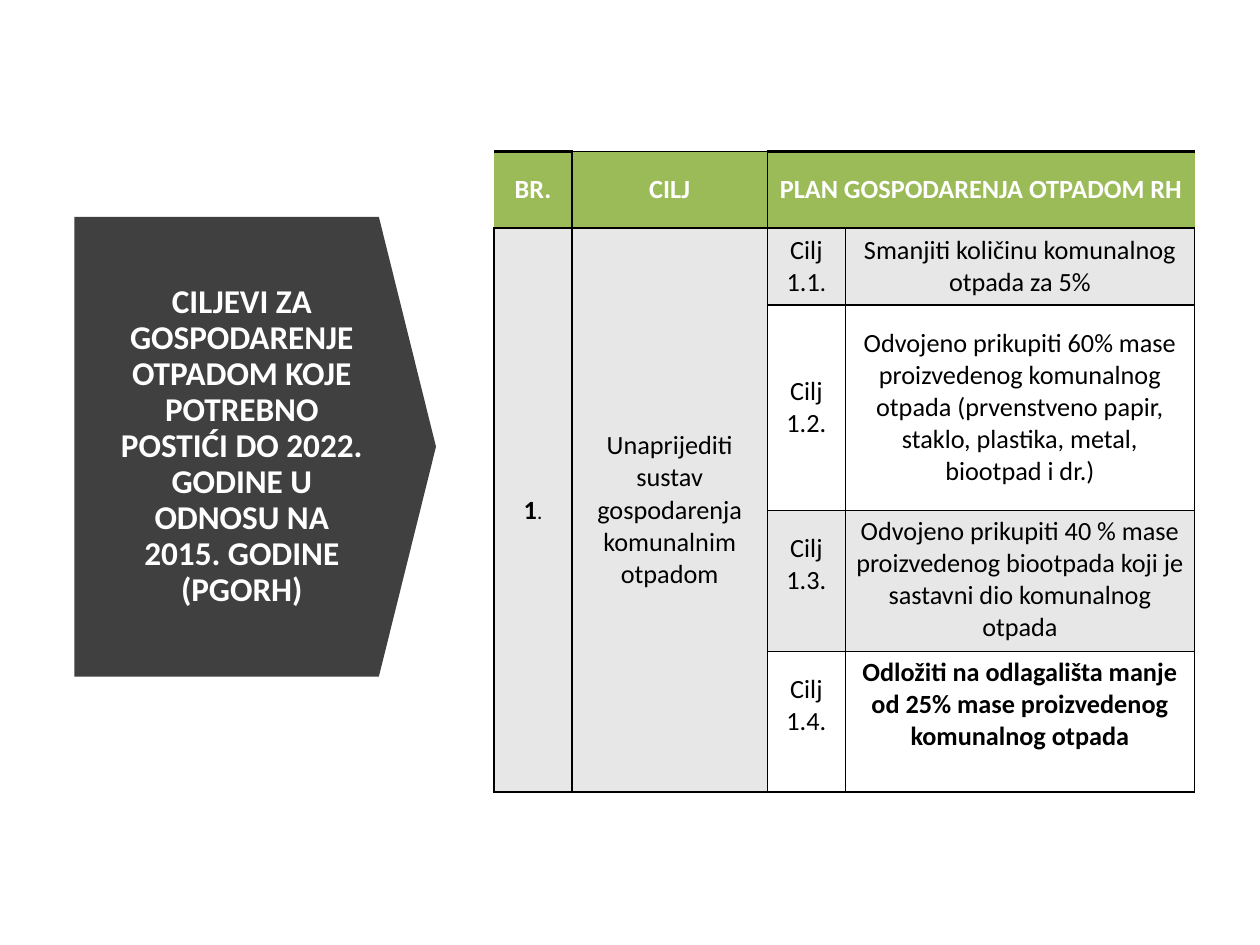
from lxml import etree
from pptx import Presentation
from pptx.dml.color import RGBColor
from pptx.enum.shapes import MSO_SHAPE
from pptx.enum.text import MSO_ANCHOR, PP_ALIGN
from pptx.oxml.ns import qn
from pptx.util import Cm, Pt

DOWN_ARROW = MSO_SHAPE.DOWN_ARROW
CENTER = PP_ALIGN.CENTER
TOP, MIDDLE = MSO_ANCHOR.TOP, MSO_ANCHOR.MIDDLE

BLACK, WHITE = "000000", "FFFFFF"
DARK, GREEN, GREY = "404040", "9BBB59", "E7E7E7"
FONT = "Calibri"

TITLE = ("CILJEVI ZA GOSPODARENJE OTPADOM KOJE POTREBNO POSTIĆI DO 2022. "
         "GODINE U ODNOSU NA 2015. GODINE (PGORH)")
COLUMN_WIDTHS = (1.57, 3.94, 1.57, 7.04)
ROW_HEIGHTS = (1.55, 1.55, 4.14, 2.84, 2.84)
HEADERS = ("BR.", "CILJ", "PLAN GOSPODARENJA OTPADOM RH")
# Runs of the label, goal, bold goal, goal anchor, bottom inset of the label in cm
GOALS = (
    ((("Cilj 1.1", 15), (".", 14)), "Smanjiti količinu komunalnog otpada za 5%",
     False, MIDDLE, 0.1),
    ((("Cilj 1.2.", 15),),
     "Odvojeno prikupiti 60% mase proizvedenog komunalnog otpada "
     "(prvenstveno papir, staklo, plastika, metal, biootpad i dr.)",
     False, MIDDLE, 0.1),
    ((("Cilj 1.3.", 15),),
     "Odvojeno prikupiti 40 % mase proizvedenog biootpada koji je "
     "sastavni dio komunalnog otpada", False, TOP, 0.75),
    ((("Cilj 1.4.", 15),),
     "Odložiti na odlagališta manje od 25% mase proizvedenog komunalnog otpada",
     True, TOP, 0.75),
)


def color(value):
    return RGBColor.from_string(value)


def add_run(paragraph, text, size, font_color, bold=False):
    run = paragraph.add_run()
    run.text = text
    run.font.name = FONT
    run.font.size = Pt(size)
    run.font.bold = bold
    run.font.color.rgb = color(font_color)


def set_borders(cell, widths):
    """Draw left, right, top and bottom borders in points; 0 means no line."""
    properties = cell._tc.get_or_add_tcPr()
    for side, width in zip("LRTB", widths):
        line = etree.SubElement(properties, qn(f"a:ln{side}"), w=str(Pt(width)))
        if width:
            fill = etree.SubElement(line, qn("a:solidFill"))
            etree.SubElement(fill, qn("a:srgbClr"), val=BLACK)
        else:
            etree.SubElement(line, qn("a:noFill"))


def fill_cell(cell, runs, fill, font_color=BLACK, bold=False, anchor=MIDDLE, bottom=0.1):
    cell.fill.solid()
    cell.fill.fore_color.rgb = color(fill)
    cell.margin_left = cell.margin_right = Cm(0.2)
    cell.margin_top, cell.margin_bottom = Cm(0.1), Cm(bottom)
    cell.vertical_anchor = anchor
    paragraph = cell.text_frame.paragraphs[0]
    paragraph.alignment = CENTER
    for text, size in runs:
        add_run(paragraph, text, size, font_color, bold)


def add_title_arrow(slide, left, top, width, height):
    """Place a right-pointing arrow, a turned down arrow, with the title on it."""
    arrow = slide.shapes.add_shape(
        DOWN_ARROW, Cm(left + (width - height) / 2), Cm(top + (height - width) / 2),
        Cm(height), Cm(width))
    arrow.rotation = 270
    arrow.adjustments[0], arrow.adjustments[1] = 1, 0.158
    arrow.shadow.inherit = False
    arrow.fill.solid()
    arrow.fill.fore_color.rgb = color(DARK)
    arrow.line.fill.background()

    title = slide.shapes.add_textbox(
        Cm(left + 0.63), Cm(top + 1.09), Cm(5.49), Cm(height - 2.18))
    frame = title.text_frame
    frame.word_wrap = True
    frame.vertical_anchor = MIDDLE
    paragraph = frame.paragraphs[0]
    paragraph.alignment = CENTER
    paragraph.line_spacing = 0.9
    paragraph.space_after = Pt(6)
    add_run(paragraph, TITLE, 19, WHITE, True)


def add_goal_table(slide, left, top):
    table = slide.shapes.add_table(
        len(ROW_HEIGHTS), len(COLUMN_WIDTHS), Cm(left), Cm(top),
        Cm(sum(COLUMN_WIDTHS)), Cm(sum(ROW_HEIGHTS))).table
    table.first_row = table.horz_banding = False
    for column, width in zip(table.columns, COLUMN_WIDTHS):
        column.width = Cm(width)
    for row, height in zip(table.rows, ROW_HEIGHTS):
        row.height = Cm(height)

    header_borders = ((0, 1, 2, 1), (1, 1, 1, 1), (1, 0, 2, 1), (0, 0, 2, 1))
    for column, widths in enumerate(header_borders):
        set_borders(table.cell(0, column), widths)
        for row in range(1, len(ROW_HEIGHTS)):
            set_borders(table.cell(row, column), (1, 1, 1, 1))

    table.cell(0, 2).merge(table.cell(0, 3))
    for column in (0, 1):
        table.cell(1, column).merge(table.cell(4, column))

    for column, text in enumerate(HEADERS):
        fill_cell(table.cell(0, column), [(text, 15)], GREEN, WHITE, True)
    fill_cell(table.cell(1, 0), [("1", 15), (".", 12)], GREY)
    table.cell(1, 0).text_frame.paragraphs[0].runs[0].font.bold = True
    fill_cell(table.cell(1, 1),
              [("Unaprijediti sustav gospodarenja komunalnim otpadom", 15)], GREY)
    for row, (label, goal, bold, anchor, bottom) in enumerate(GOALS, start=1):
        fill = GREY if row % 2 else WHITE
        fill_cell(table.cell(row, 2), label, fill, bottom=bottom)
        fill_cell(table.cell(row, 3), [(goal, 15)], fill, bold=bold, anchor=anchor)


def main():
    presentation = Presentation()
    presentation.slide_width, presentation.slide_height = Cm(25.4), Cm(19.05)
    slide = presentation.slides.add_slide(presentation.slide_layouts[6])
    add_title_arrow(slide, 1.5, 4.37, 7.29, 9.27)
    add_goal_table(slide, 9.96, 3.05)
    presentation.save("out.pptx")


if __name__ == "__main__":
    main()
